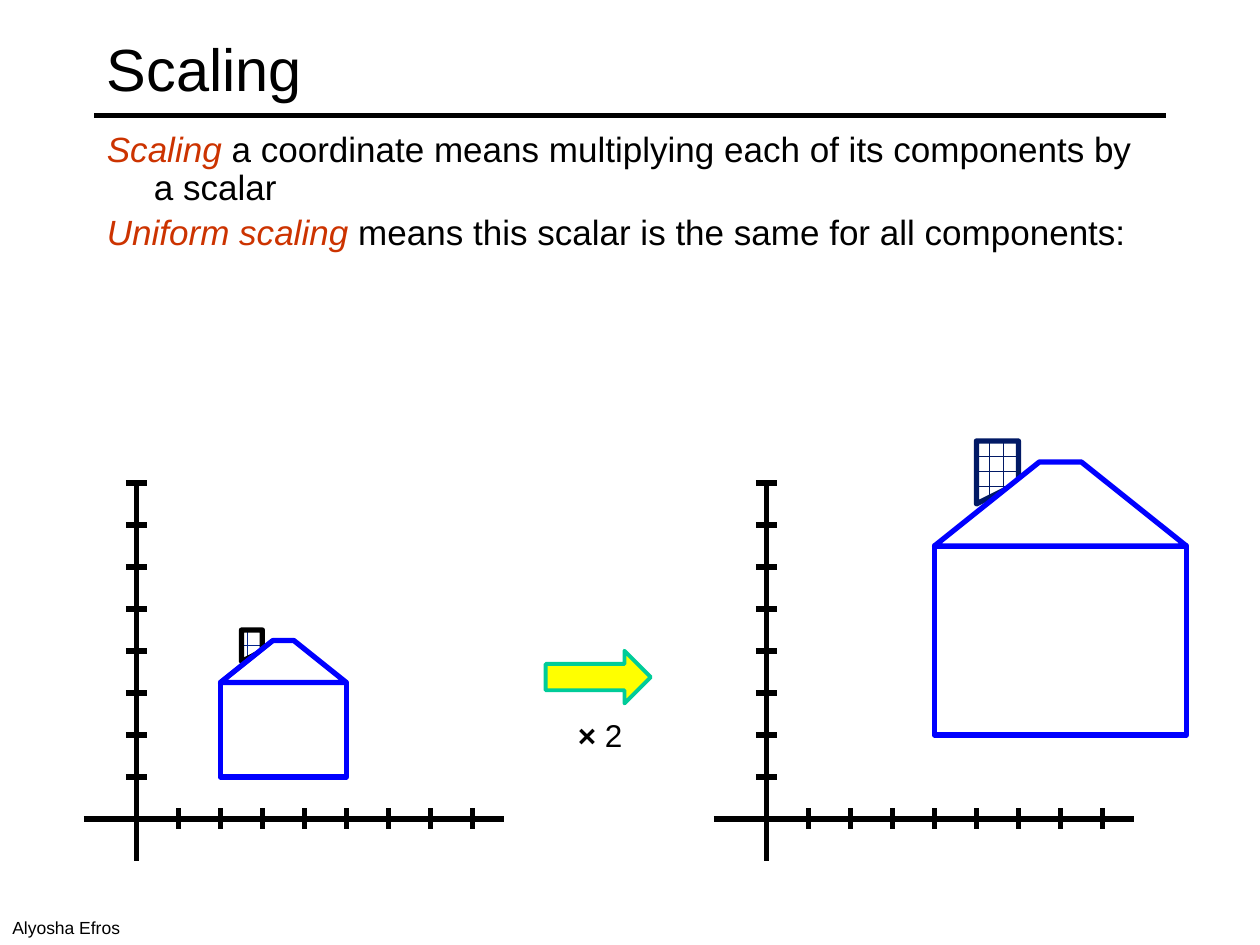
from lxml.etree import SubElement
from pptx import Presentation
from pptx.dml.color import RGBColor
from pptx.enum.dml import MSO_PATTERN
from pptx.enum.shapes import MSO_CONNECTOR, MSO_SHAPE
from pptx.enum.text import MSO_ANCHOR, MSO_AUTO_SIZE, PP_ALIGN
from pptx.oxml.ns import qn
from pptx.util import Cm, Pt

BLACK = RGBColor(0x00, 0x00, 0x00)
WHITE = RGBColor(0xFF, 0xFF, 0xFF)
RED = RGBColor(0xCC, 0x33, 0x00)
BLUE = RGBColor(0x00, 0x00, 0xFF)
YELLOW = RGBColor(0xFF, 0xFF, 0x00)
GREEN = RGBColor(0x00, 0xCC, 0x99)
BRICK = RGBColor(0x03, 0x23, 0x89)
NAVY = RGBColor(0x01, 0x19, 0x65)

UNIT = Cm(2.54) / 3  # one step on the axes
ORIGIN_Y = Cm(16.51)
TICKS = range(1, 9)


def add_line(shapes, start, end):
    line = shapes.add_connector(MSO_CONNECTOR.STRAIGHT, *start, *end)
    line.line.color.rgb = BLACK
    line.line.width = Pt(3)
    SubElement(line._element.spPr, qn("a:effectLst"))


def style_span(span, size, color=BLACK):
    span.font.name = "Arial"
    span.font.size = Pt(size)
    span.font.color.rgb = color


deck = Presentation()
deck.slide_width, deck.slide_height = Cm(25.4), Cm(19.05)
page = deck.slides.add_slide(deck.slide_layouts[1])

# Title with its rule
add_line(page.shapes, (Cm(1.9), Cm(2.33)), (Cm(23.5), Cm(2.33)))
title = page.shapes.title
title.left, title.top, title.width, title.height = Cm(1.9), Cm(0.2), Cm(21.6), Cm(2.34)
title.text_frame.text = "Scaling"
title.text_frame.auto_size = MSO_AUTO_SIZE.NONE
title.text_frame.vertical_anchor = MSO_ANCHOR.MIDDLE
title.text_frame.paragraphs[0].alignment = PP_ALIGN.LEFT
style_span(title.text_frame.paragraphs[0].runs[0], 34)

# Definitions, each opening with its term
definitions = [
    ("Scaling", " a coordinate means multiplying each of its components by a scalar"),
    ("Uniform scaling", " means this scalar is the same for all components:"),
]
body = page.placeholders[1]
body.left, body.top, body.width, body.height = Cm(1.9), Cm(2.54), Cm(21.6), Cm(6.65)
frame = body.text_frame
frame.auto_size = MSO_AUTO_SIZE.NONE
for index, (term, meaning) in enumerate(definitions):
    para = frame.add_paragraph() if index else frame.paragraphs[0]
    para.line_spacing = 0.9
    para.space_before = Pt(4)
    props = para._p.get_or_add_pPr()
    props.set("marL", str(Cm(0.95)))
    props.set("indent", str(-Cm(0.95)))
    SubElement(props, qn("a:buNone"))
    for text, color in ((term, RED), (meaning, BLACK)):
        span = para.add_run()
        span.text = text
        style_span(span, 20, color)
        span.font.italic = color == RED

# Axes and house, before and after scaling; house points are in axis steps
house_wall = [(2, 1), (2, 3.25), (5, 3.25), (5, 1)]
house_roof = [(2, 3.25), (3.25, 4.25), (3.75, 4.25), (5, 3.25)]
house_chimney = [(2.5, 3.75), (2.5, 4.5), (3, 4.5), (3, 4)]

for origin_x, factor, bricks, chimney_edge in (
    (Cm(2.75), 1, BRICK, BLACK),
    (Cm(15.45), 2, NAVY, NAVY),
):
    def at(x, y):
        """Slide position of a point given in axis steps."""
        return round(origin_x + x * UNIT), round(ORIGIN_Y - y * UNIT)

    axes = page.shapes.add_group_shape().shapes
    add_line(axes, at(0, 8), at(0, -1))
    add_line(axes, at(-1.25, 0), at(8.75, 0))
    for tick in TICKS:
        add_line(axes, at(tick, 0.25), at(tick, -0.25))
    for tick in TICKS:
        add_line(axes, at(-0.25, tick), at(0.25, tick))

    house = page.shapes.add_group_shape().shapes
    for points, edge in (
        (house_chimney, chimney_edge),
        (house_wall, BLUE),
        (house_roof, BLUE),
    ):
        corners = [at(x * factor, y * factor) for x, y in points]
        if points is house_wall:
            (left, bottom), (right, top) = corners[0], corners[2]
            part = house.add_shape(
                MSO_SHAPE.RECTANGLE, left, top, right - left, bottom - top
            )
        else:
            outline = house.build_freeform(*corners[0])
            outline.add_line_segments(corners[1:], close=True)
            part = outline.convert_to_shape()
        part.shadow.inherit = False
        part.line.color.rgb = edge
        part.line.width = Pt(3)
        if points is house_chimney:
            part.fill.patterned()
            part.fill.pattern = MSO_PATTERN.HORIZONTAL_BRICK
            part.fill.fore_color.rgb = bricks
            part.fill.back_color.rgb = WHITE
        else:
            part.fill.solid()
            part.fill.fore_color.rgb = WHITE

# Arrow between the two drawings
arrow = page.shapes.add_shape(
    MSO_SHAPE.RIGHT_ARROW, Cm(11), Cm(13.12), Cm(2.12), Cm(1.06)
)
arrow.shadow.inherit = False
arrow.fill.solid()
arrow.fill.fore_color.rgb = YELLOW
arrow.line.color.rgb = GREEN
arrow.line.width = Pt(2.25)

box = page.shapes.add_textbox(Cm(11.3), Cm(14.18), Cm(1.6), Cm(1.27))
box.text_frame.word_wrap = False
box.text_frame.vertical_anchor = MSO_ANCHOR.MIDDLE
para = box.text_frame.paragraphs[0]
para.alignment = PP_ALIGN.CENTER
for text, bold in (("× ", True), ("2", False)):
    span = para.add_run()
    span.text = text
    style_span(span, 18)
    span.font.bold = bold

# Credit
credit = page.shapes.add_textbox(Cm(0), Cm(18.36), Cm(8.58), Cm(0.69))
credit.text_frame.word_wrap = True
credit.text_frame.text = "Alyosha Efros"
style_span(credit.text_frame.paragraphs[0].runs[0], 10)

deck.save("out.pptx")
